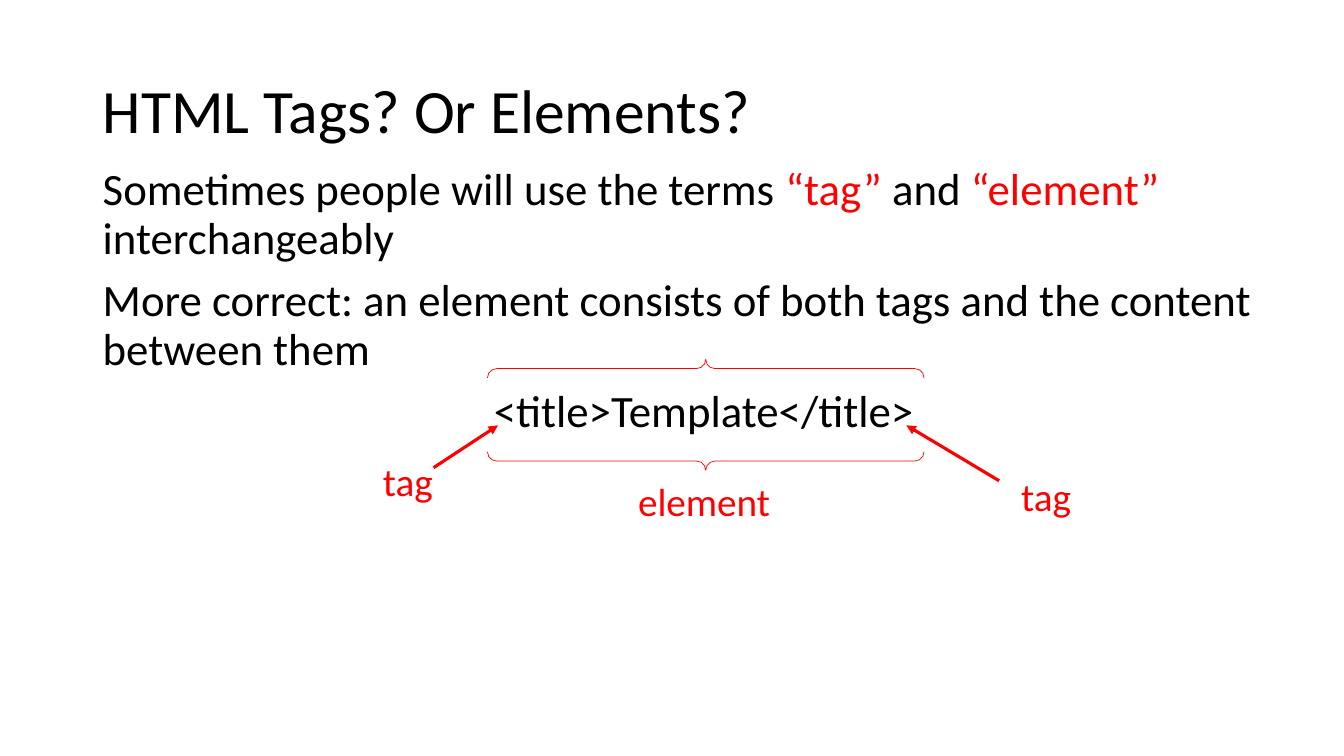
from lxml import etree
from pptx import Presentation
from pptx.dml.color import RGBColor
from pptx.enum.shapes import MSO_CONNECTOR, MSO_SHAPE
from pptx.enum.text import MSO_ANCHOR, MSO_AUTO_SIZE, PP_ALIGN
from pptx.oxml.ns import qn
from pptx.util import Inches, Pt

STRAIGHT = MSO_CONNECTOR.STRAIGHT
BRACE_PAIR = MSO_SHAPE.LEFT_BRACE if not hasattr(MSO_SHAPE, "DOUBLE_BRACE") else MSO_SHAPE.DOUBLE_BRACE
MIDDLE, TOP = MSO_ANCHOR.MIDDLE, MSO_ANCHOR.TOP
LEFT, CENTER = PP_ALIGN.LEFT, PP_ALIGN.CENTER
FIT_SHAPE, NO_FIT = MSO_AUTO_SIZE.SHAPE_TO_FIT_TEXT, MSO_AUTO_SIZE.NONE

FONT = "Calibri"
BLACK, RED = "000000", "FF0000"

TITLE = "HTML Tags? Or Elements?"
BODY = [
    (LEFT, [
        ("Sometimes people will use the terms ", BLACK),
        ("“tag”", RED),
        (" and ", BLACK),
        ("“element”", RED),
        (" interchangeably", BLACK),
    ]),
    (LEFT, [("More correct: an element consists of both tags and the content between them", BLACK)]),
    (CENTER, [("<title>Template</title>", BLACK)]),
]
LABELS = [
    ("tag", 3.7, 4.49, 0.7),
    ("tag", 10.03, 4.64, 0.7),
    ("element", 6.23, 4.69, 1.52),
]
LABEL_HEIGHT = 0.57
ARROWS = [
    ((4.3, 4.64), (4.94, 4.22)),
    ((9.91, 4.77), (8.99, 4.22)),
]
BRACES = (6.45, 1.95, 1.1, 4.33)


def color(value):
    return RGBColor.from_string(value)


def add_span(para, text, size, shade):
    span = para.add_run()
    span.text = text
    span.font.name = FONT
    span.font.size = Pt(size)
    span.font.color.rgb = color(shade)


def add_label(page, text, left, top, width):
    box = page.shapes.add_textbox(*map(Inches, (left, top, width, LABEL_HEIGHT)))
    box.text_frame.word_wrap = False
    box.text_frame.auto_size = FIT_SHAPE
    add_span(box.text_frame.paragraphs[0], text, 28, RED)


def add_arrow(page, start, end):
    arrow = page.shapes.add_connector(STRAIGHT, *map(Inches, start + end))
    arrow.line.color.rgb = color(RED)
    arrow.line.width = Pt(2.25)
    head = etree.SubElement(arrow.line._get_or_add_ln(), qn("a:tailEnd"))
    head.set("type", "triangle")
    etree.SubElement(arrow._element.spPr, qn("a:effectLst"))


def add_title(page):
    title = page.shapes.title
    title.left, title.top, title.width, title.height = map(Inches, (0.92, 0.4, 11.5, 1.45))
    frame = title.text_frame
    frame.vertical_anchor = MIDDLE
    frame.auto_size = NO_FIT
    para = frame.paragraphs[0]
    para.alignment = LEFT
    para.line_spacing = 0.9
    add_span(para, TITLE, 44, BLACK)


def add_body(page):
    box = page.shapes.add_textbox(*map(Inches, (0.92, 1.61, 12.12, 4.24)))
    frame = box.text_frame
    frame.word_wrap = True
    frame.vertical_anchor = TOP
    for index, (alignment, spans) in enumerate(BODY):
        para = frame.add_paragraph() if index else frame.paragraphs[0]
        para.alignment = alignment
        para.line_spacing = 0.9
        para.space_before = Pt(10 if index else 0)
        for text, shade in spans:
            add_span(para, text, 32, shade)


def add_braces(page):
    braces = page.shapes.add_shape(BRACE_PAIR, *map(Inches, BRACES))
    braces.rotation = 270
    braces.shadow.inherit = False
    braces.fill.background()
    braces.line.color.rgb = color(RED)
    braces.line.width = Pt(0.5)


def main():
    deck = Presentation()
    deck.slide_width, deck.slide_height = Inches(13.33), Inches(7.5)
    page = deck.slides.add_slide(deck.slide_layouts.get_by_name("Title Only"))
    add_title(page)
    add_body(page)
    add_braces(page)
    for label in LABELS:
        add_label(page, *label)
    for start, end in ARROWS:
        add_arrow(page, start, end)
    deck.save("out.pptx")


if __name__ == "__main__":
    main()
